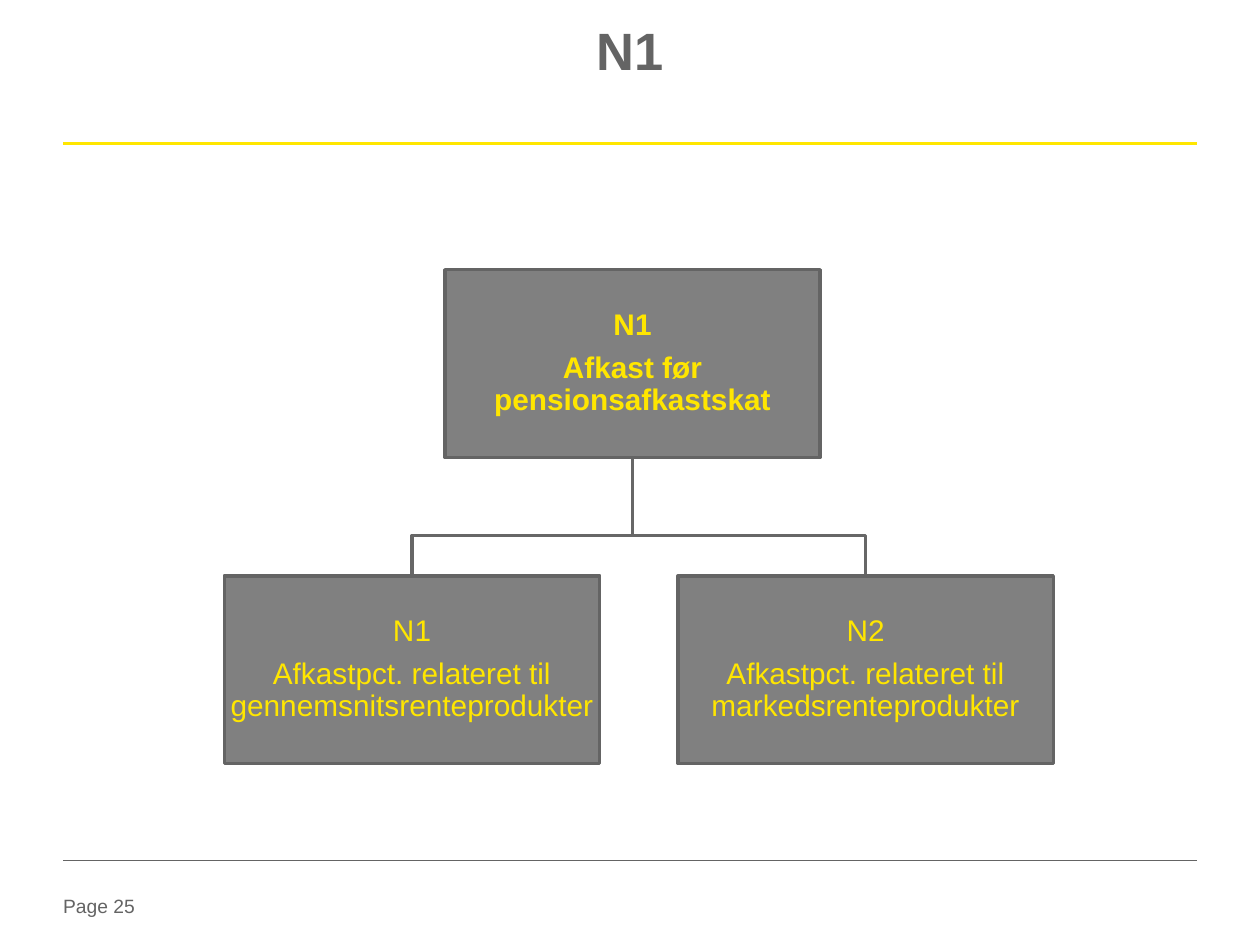
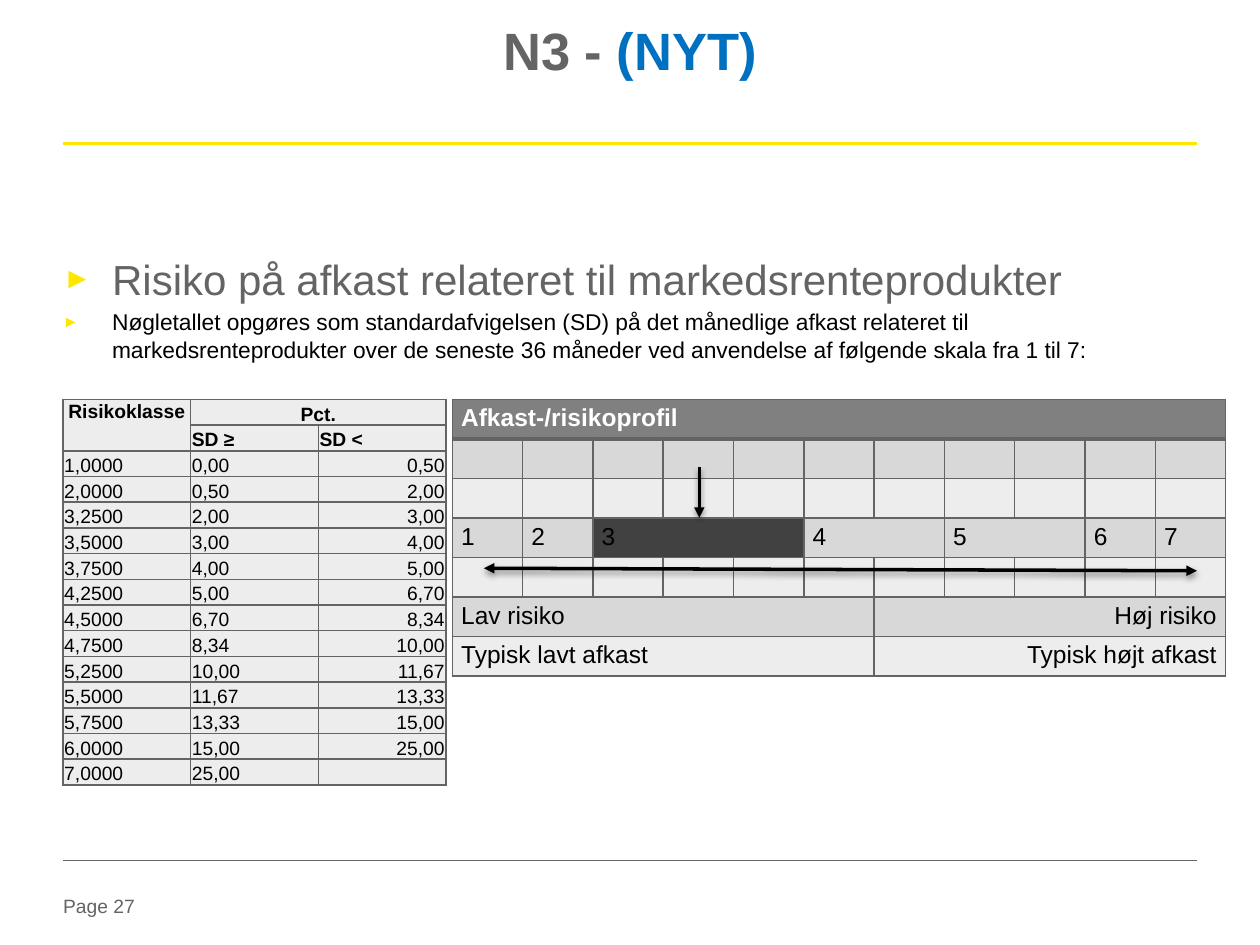
from lxml import etree
from pptx import Presentation
from pptx.dml import color
from pptx.enum import shapes, text
from pptx.oxml import ns
from pptx.util import Emu, Inches, Pt

FONT = "Arial"
GREY, YELLOW, BLUE = "646464", "FFE600", "0070C0"
BLACK, WHITE = "000000", "FFFFFF"
BOX_GREY, ELBOW_GREY, MARKED = "808080", "676767", "414141"
LIGHT, MID = "EDEDED", "D8D8D8"
LEFT, RIGHT = 0.5, 9.5
CENTER, TO_LEFT, TO_RIGHT = text.PP_ALIGN.CENTER, text.PP_ALIGN.LEFT, text.PP_ALIGN.RIGHT
TOP, MIDDLE, BOTTOM = text.MSO_ANCHOR.TOP, text.MSO_ANCHOR.MIDDLE, text.MSO_ANCHOR.BOTTOM

BOX_W, BOX_H = 2.98, 1.49
PARENT = (3.53, 2.14, ["N1", "Afkast før pensionsafkastskat"])
CHILDREN = [
    (1.78, 4.57, ["N1", "Afkastpct. relateret til gennemsnitsrenteprodukter"]),
    (5.38, 4.57, ["N2", "Afkastpct. relateret til markedsrenteprodukter"]),
]
ELBOW_Y = 4.25

RISK_CLASSES = ["1,0000", "2,0000", "3,2500", "3,5000", "3,7500", "4,2500", "4,5000",
                "4,7500", "5,2500", "5,5000", "5,7500", "6,0000", "7,0000"]
SD_LIMITS = ["0,00", "0,50", "2,00", "3,00", "4,00", "5,00", "6,70",
             "8,34", "10,00", "11,67", "13,33", "15,00", "25,00"]
# Profile rows: (text, columns spanned)
SCALE = [("1", 1), ("2", 1), ("3", 3), ("4", 2), ("5", 2), ("6", 1), ("7", 1)]
BLANK_ROW = [("", 1)] * 11
PROFILE = [
    [("Afkast-/risikoprofil", 11)], BLANK_ROW, BLANK_ROW, SCALE, BLANK_ROW,
    [("Lav risiko", 6), ("Høj risiko", 5)],
    [("Typisk lavt afkast", 6), ("Typisk højt afkast", 5)],
]


def rgb(hex_code):
    return color.RGBColor.from_string(hex_code)


def sub(parent, tag, **attrs):
    return etree.SubElement(parent, ns.qn(tag), attrs)


def add_run(p, words, size, hex_code, bold=False):
    r = p.add_run()
    r.text = words
    r.font.name, r.font.size, r.font.bold = FONT, Pt(size), bold
    r.font.color.rgb = rgb(hex_code)


def set_margins(frame, x, top, bottom):
    """Set the insets of a text frame or a table cell."""
    frame.margin_left = frame.margin_right = Inches(x)
    frame.margin_top, frame.margin_bottom = Inches(top), Inches(bottom)


def add_textbox(s, x, y, w, h):
    tf = s.shapes.add_textbox(Inches(x), Inches(y), Inches(w), Inches(h)).text_frame
    tf.word_wrap = True
    set_margins(tf, 0, 0, 0)
    return tf


def add_line(s, start, end, hex_code, width, head=False, tail=False, shadow=False):
    ends = [Inches(v) for v in (*start, *end)]
    ln = s.shapes.add_connector(shapes.MSO_CONNECTOR.STRAIGHT, *ends)
    ln.line.color.rgb, ln.line.width = rgb(hex_code), Pt(width)
    sp_pr = ln.line._get_or_add_ln().getparent()
    for wanted, tag in ((head, "a:headEnd"), (tail, "a:tailEnd")):
        if wanted:
            sub(sp_pr.find(ns.qn("a:ln")), tag, type="triangle")
    effects = sub(sp_pr, "a:effectLst")
    if shadow:
        outer = sub(effects, "a:outerShdw", blurRad=str(Pt(3.1)), dist=str(Pt(1.6)),
                    dir="5400000", rotWithShape="0")
        sub(sub(outer, "a:srgbClr", val=BLACK), "a:alpha", val="38000")


def add_slide(prs, title_runs, page):
    """Add a slide with title, yellow rule, footer rule and page number."""
    s = prs.slides.add_slide(prs.slide_layouts[5])
    add_run(add_textbox(s, LEFT, 7.1, 0.79, 0.22).paragraphs[0], f"Page {page}", 11, GREY)
    add_line(s, (LEFT, 1.14), (RIGHT, 1.14), YELLOW, 1.5)
    add_line(s, (LEFT, 6.83), (RIGHT, 6.83), GREY, 0.25)
    title = s.shapes.title
    title.left, title.top = Inches(LEFT), Inches(0.22)
    title.width, title.height = Inches(RIGHT - LEFT), Inches(0.94)
    tf = title.text_frame
    tf.vertical_anchor, tf.auto_size = TOP, text.MSO_AUTO_SIZE.NONE
    set_margins(tf, 0, 0, 0)
    p = tf.paragraphs[0]
    p.alignment, p.line_spacing = CENTER, 0.85
    for words, hex_code in title_runs:
        add_run(p, words, 30, hex_code, True)
    return s


def add_elbow(s, start, end):
    (x1, y1), (x2, y2) = start, end
    fb = s.shapes.build_freeform(Inches(x1), Inches(y1))
    corners = [(x1, ELBOW_Y), (x2, ELBOW_Y), (x2, y2)]
    fb.add_line_segments([(Inches(x), Inches(y)) for x, y in corners], close=False)
    sp = fb.convert_to_shape()
    sp.shadow.inherit = False
    sp.fill.background()
    sp.line.color.rgb, sp.line.width = rgb(ELBOW_GREY), Pt(2)


def add_box(s, x, y, lines, bold=False):
    sp = s.shapes.add_shape(shapes.MSO_SHAPE.RECTANGLE, Inches(x), Inches(y),
                            Inches(BOX_W), Inches(BOX_H))
    sp.shadow.inherit = False
    sp.fill.solid()
    sp.fill.fore_color.rgb = rgb(BOX_GREY)
    sp.line.color.rgb, sp.line.width = rgb(GREY), Pt(2)
    tf = sp.text_frame
    tf.word_wrap, tf.vertical_anchor = True, MIDDLE
    set_margins(tf, 0.01, 0.01, 0.01)
    for i, words in enumerate(lines):
        p = tf.add_paragraph() if i else tf.paragraphs[0]
        p.alignment, p.line_spacing, p.space_after = CENTER, 0.9, Pt(6)
        add_run(p, words, 17, YELLOW, bold)


def add_bullet(p, words, size, hex_code):
    p_pr = p._p.get_or_add_pPr()
    indent = Inches(0.39)
    p_pr.set("marL", str(indent))
    p_pr.set("indent", str(-indent))
    sub(sub(p_pr, "a:buClr"), "a:srgbClr", val=YELLOW)
    sub(p_pr, "a:buSzPct", val="70000")
    sub(p_pr, "a:buFont", typeface=FONT)
    sub(p_pr, "a:buChar", char="►")
    add_run(p, words, size, hex_code)


def add_table(s, x, y, w, h, rows, cols):
    table = s.shapes.add_table(rows, cols, Inches(x), Inches(y), Inches(w), Inches(h)).table
    table.first_row = table.horz_banding = False
    for col in table.columns:
        col.width = Emu(round(Inches(w) / cols))
    for row in table.rows:
        row.height = Emu(round(Inches(h) / rows))
    return table


def set_borders(cell, top=1, bottom=1):
    tc_pr = cell._tc.get_or_add_tcPr()
    for i, (side, width) in enumerate(zip("LRTB", (1, 1, top, bottom))):
        ln = sub(tc_pr, f"a:ln{side}", w=str(Pt(width)))
        sub(sub(ln, "a:solidFill"), "a:srgbClr", val=GREY)
        tc_pr.insert(i, ln)


def fill_cell(cell, words, size, fill, align=TO_LEFT, hex_code=BLACK, bold=False):
    cell.fill.solid()
    cell.fill.fore_color.rgb = rgb(fill)
    p = cell.text_frame.paragraphs[0]
    p.alignment = align
    if words:
        add_run(p, words, size, hex_code, bold)
    else:
        sub(p._p, "a:endParaRPr", sz=str(size * 100))


def add_risk_class_table(s):
    rows = [["Risikoklasse", "Pct.", ""], ["", "SD ≥", "SD <"]]
    rows += zip(RISK_CLASSES, SD_LIMITS, SD_LIMITS[1:] + [""])
    table = add_table(s, LEFT, 3.17, 3.04, 3.06, len(rows), 3)
    for i, row in enumerate(rows):
        for j, words in enumerate(row):
            cell = table.cell(i, j)
            align = CENTER if i == 0 else TO_RIGHT if i > 1 and j == 2 else TO_LEFT
            fill_cell(cell, words, 11, LIGHT, align, bold=i < 2)
            set_margins(cell, 0.01, 0.01, 0)
            cell.vertical_anchor = TOP if i == j == 0 else BOTTOM
            set_borders(cell)
    table.cell(0, 0).merge(table.cell(1, 0))
    table.cell(0, 1).merge(table.cell(0, 2))


def add_profile_table(s):
    table = add_table(s, 3.59, 3.17, 6.14, 2.16, len(PROFILE), 11)
    for i, row in enumerate(PROFILE):
        band = BOX_GREY if i == 0 else MID if i % 2 else LIGHT
        j = 0
        for words, span in row:
            for k in range(j, j + span):
                cell = table.cell(i, k)
                fill_cell(cell, words if k == j else "", 14,
                          MARKED if words == "3" else band,
                          TO_RIGHT if words and i > 4 and j else TO_LEFT,
                          WHITE if i == 0 else BLACK, i == 0)
                set_margins(cell, 0.07, 0.04, 0.04)
                set_borders(cell, top=3 if i == 1 else 1, bottom=3 if i == 0 else 1)
            if span > 1:
                table.cell(i, j).merge(table.cell(i, j + span - 1))
            j += span


def add_return_tree_slide(prs):
    s = add_slide(prs, [("N1", GREY)], 25)
    parent_x, parent_y, parent_lines = PARENT
    start = (parent_x + BOX_W / 2, parent_y + BOX_H)
    for x, y, _ in reversed(CHILDREN):
        add_elbow(s, start, (x + BOX_W / 2, y))
    add_box(s, parent_x, parent_y, parent_lines, bold=True)
    for child in CHILDREN:
        add_box(s, *child)


def add_risk_slide(prs):
    s = add_slide(prs, [("N3 - ", GREY), ("(NYT)", BLUE)], 27)
    tf = add_textbox(s, LEFT, 2.01, RIGHT - LEFT, 1.1)
    add_bullet(tf.paragraphs[0], "Risiko på afkast relateret til markedsrenteprodukter", 24, GREY)
    p = tf.add_paragraph()
    p.space_before = Pt(2.6)
    add_bullet(p, "Nøgletallet opgøres som standardafvigelsen (SD) på det månedlige afkast "
               "relateret til markedsrenteprodukter over de seneste 36 måneder ved "
               "anvendelse af følgende skala fra 1 til 7:", 13, BLACK)
    add_risk_class_table(s)
    add_profile_table(s)
    add_line(s, (3.84, 4.51), (RIGHT, 4.53), BLACK, 2, head=True, tail=True, shadow=True)
    add_line(s, (5.55, 3.71), (5.55, 4.11), BLACK, 2, tail=True, shadow=True)


def main():
    prs = Presentation()
    prs.slide_width, prs.slide_height = Inches(10), Inches(7.5)
    add_return_tree_slide(prs)
    add_risk_slide(prs)
    prs.save("out.pptx")


if __name__ == "__main__":
    main()
